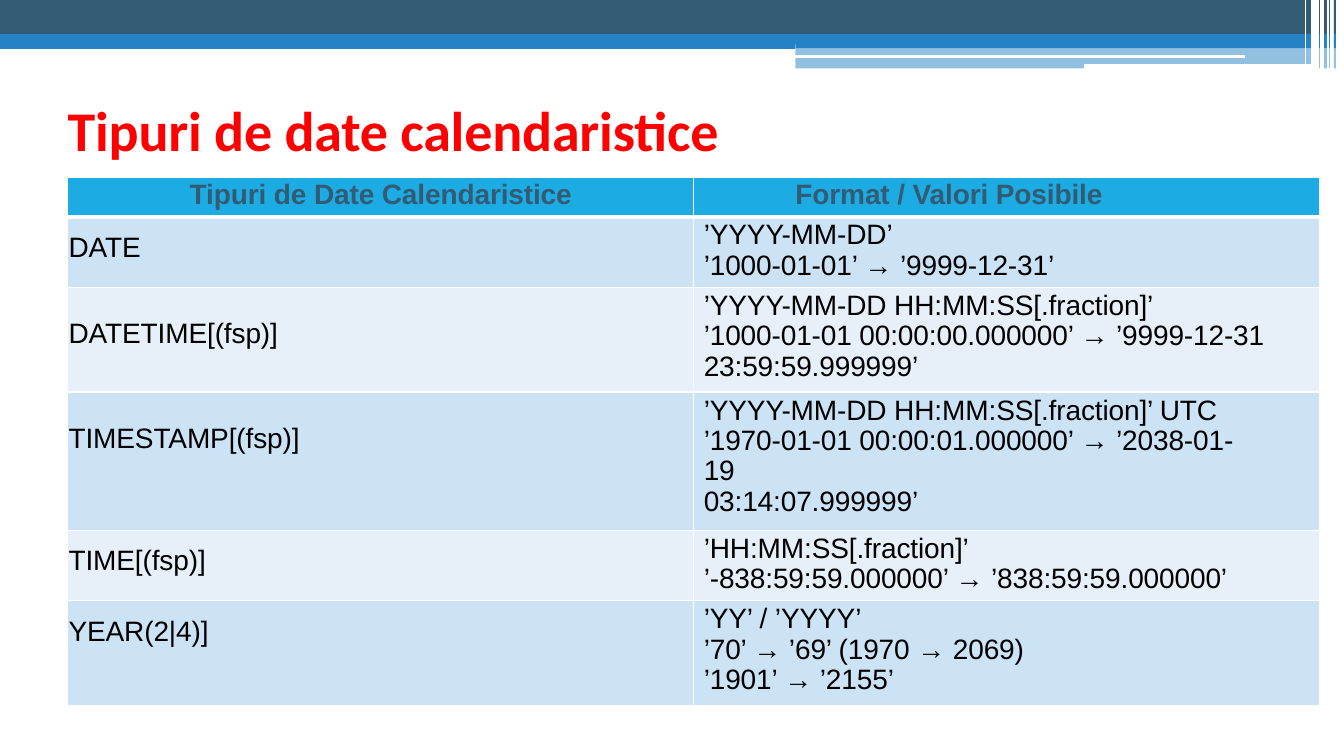
import pptx
import pptx.util
import pptx.dml.color
import pptx.enum.shapes
import pptx.enum.text
import pptx.oxml
import pptx.oxml.ns
from lxml import etree

Inches, Pt = pptx.util.Inches, pptx.util.Pt
RGBColor = pptx.dml.color.RGBColor
qn = pptx.oxml.ns.qn
ALIGN = pptx.enum.text.PP_ALIGN

NAVY = RGBColor(0x33, 0x5B, 0x74)
BLUE = RGBColor(0x25, 0x83, 0xC5)
WHITE = RGBColor(0xFF, 0xFF, 0xFF)
BLACK = RGBColor(0, 0, 0)
RED = RGBColor(0xFF, 0, 0)
HEADER = RGBColor(0x1C, 0xAC, 0xE3)
BAND_DARK = RGBColor(0xCC, 0xE2, 0xF5)
BAND_LIGHT = RGBColor(0xE7, 0xF0, 0xF9)

HEADINGS = ("Tipuri de Date Calendaristice", "Format / Valori Posibile")
# name, value lines, row height, top margin of the name, right margin of the values
DATE_TYPES = [
    ("DATE", ["’YYYY-MM-DD’", "’1000-01-01’ → ’9999-12-31’"], 0.7, 0.16, 0),
    ("DATETIME[(fsp)]", ["’YYYY-MM-DD HH:MM:SS[.fraction]’",
                         "’1000-01-01 00:00:00.000000’ → ’9999-12-31",
                         "23:59:59.999999’"], 1.04, 0.32, 0),
    ("TIMESTAMP[(fsp)]", ["’YYYY-MM-DD HH:MM:SS[.fraction]’ UTC",
                          "’1970-01-01 00:00:01.000000’ → ’2038-01-19",
                          "03:14:07.999999’"], 1.37, 0.32, 0.6),
    ("TIME[(fsp)]", ["’HH:MM:SS[.fraction]’",
                     "’-838:59:59.000000’ → ’838:59:59.000000’"], 0.7, 0.16, 0),
    ("YEAR(2|4)]", ["’YY’ / ’YYYY’", "’70’ → ’69’ (1970 → 2069)",
                    "’1901’ → ’2155’"], 1.04, 0.16, 0),
]


def add_run(p, text, size, font, color, bold=False):
    """Add one slightly tightened run to a paragraph."""
    r = p.add_run()
    r.text = text
    r.font.size, r.font.name, r.font.bold = Pt(size), font, bold
    r.font.color.rgb = color
    r.font._element.set("spc", "-10")


def add_band(s, x, y, w, h, color, alpha=None):
    """Add a plain filled rectangle."""
    sp = s.shapes.add_shape(pptx.enum.shapes.MSO_SHAPE.RECTANGLE,
                            Inches(x), Inches(y), Inches(w), Inches(h))
    sp.shadow.inherit = False
    sp.line.fill.background()
    sp.fill.solid()
    sp.fill.fore_color.rgb = color
    if alpha is not None:
        clr = sp._element.spPr.find(".//" + qn("a:srgbClr"))
        etree.SubElement(clr, qn("a:alpha")).set("val", str(alpha * 1000))


def add_rule(s, x1, y1, x2, y2, color, width):
    """Add a straight line without shadow."""
    c = s.shapes.add_connector(pptx.enum.shapes.MSO_CONNECTOR.STRAIGHT,
                               Inches(x1), Inches(y1), Inches(x2), Inches(y2))
    c.line.color.rgb = color
    c.line.width = Pt(width)
    etree.SubElement(c._element.spPr, qn("a:effectLst"))


def add_banner(s, x, y, w):
    """Draw the striped banner across the top of the slide."""
    half = x + 7.89
    add_rule(s, x, y + 0.46, half, y + 0.46, BLUE, 4.08)
    for left, top, height, color, alpha in (
            (x, 0, 0.34, NAVY, None), (x, 0.34, 0.1, BLUE, None),
            (half, 0.39, 0.09, BLUE, None), (half, 0.48, 0.2, BLUE, 50)):
        add_band(s, left, y + top, x + w - 0.06 - left, height, color, alpha)
        add_band(s, x + w - 0.02, y + top, 0.02, height, color, alpha)
    add_rule(s, half, y + 0.56, x + 12.35, y + 0.56, WHITE, 2.16)
    add_rule(s, x + 10.75, y + 0.66, x + 13.08, y + 0.66, WHITE, 2.88)
    for left, height, width in ((13.17, 0.68, 0.96), (13.11, 0.68, 2.88),
                                (13.04, 0.64, 5.75), (12.95, 0.64, 0.96)):
        add_rule(s, x + left, y, x + left, y + height, WHITE, width)


def add_title(s, x, y, w, h):
    """Add the slide title."""
    tf = s.shapes.add_textbox(Inches(x), Inches(y), Inches(w), Inches(h)).text_frame
    tf.word_wrap = True
    tf.margin_left = tf.margin_right = tf.margin_bottom = 0
    tf.margin_top = Inches(0.01)
    add_run(tf.paragraphs[0], "Tipuri de date calendaristice", 40, "Calibri", RED, True)


def fill_cell(cell, lines, fill, color=BLACK, bold=False, top=0.04, left=0.0,
              right=0.0, align=ALIGN.LEFT, edges=(1, 1)):
    """Fill one cell with text, white borders and a background."""
    cell.margin_left, cell.margin_right = Inches(left), Inches(right)
    cell.margin_top, cell.margin_bottom = Inches(top), 0
    tf = cell.text_frame
    for i, line in enumerate(lines):
        p = tf.add_paragraph() if i else tf.paragraphs[0]
        p.alignment = align
        p.line_spacing = 0.97
        add_run(p, line, 20, "Arial", color, bold)
    tcPr = cell._tc.get_or_add_tcPr()
    for tag, width in zip(("lnL", "lnR", "lnT", "lnB"), (1, 1) + edges):
        ln = etree.SubElement(tcPr, qn("a:" + tag), w=str(Pt(width)))
        solid = etree.SubElement(ln, qn("a:solidFill"))
        etree.SubElement(solid, qn("a:srgbClr"), val=str(WHITE))
    cell.fill.solid()
    cell.fill.fore_color.rgb = fill


def add_types_table(s, x, y, w):
    """Add the table of date types and their formats."""
    heights = [0.39] + [row[2] for row in DATE_TYPES]
    table = s.shapes.add_table(len(heights), 2, Inches(x), Inches(y),
                               Inches(w), Inches(sum(heights))).table
    table.first_row = table.horz_banding = False
    for row, height in zip(table.rows, heights):
        row.height = Inches(height)
    for col, (text, left, align) in enumerate(zip(
            HEADINGS, (0, 1.01), (ALIGN.CENTER, ALIGN.LEFT))):
        fill_cell(table.cell(0, col), [text], HEADER, NAVY, True, top=0.03,
                  left=left, align=align, edges=(1, 3))
    for i, (name, values, _, top, right) in enumerate(DATE_TYPES, 1):
        fill = BAND_DARK if i % 2 else BAND_LIGHT
        edges = (3 if i == 1 else 1, 1)
        fill_cell(table.cell(i, 0), [name], fill, top=top, left=0.01, edges=edges)
        fill_cell(table.cell(i, 1), values, fill, left=0.1, right=right, edges=edges)


def main():
    """Build and save the slide."""
    prs = pptx.Presentation()
    prs.slide_width, prs.slide_height = Inches(13.33), Inches(7.5)
    s = prs.slides.add_slide(prs.slide_layouts[6])
    add_banner(s, 0, 0, 13.25)
    add_title(s, 0.67, 0.94, 8.08, 0.69)
    add_types_table(s, 0.67, 1.76, 12.42)
    prs.save("out.pptx")


if __name__ == "__main__":
    main()
